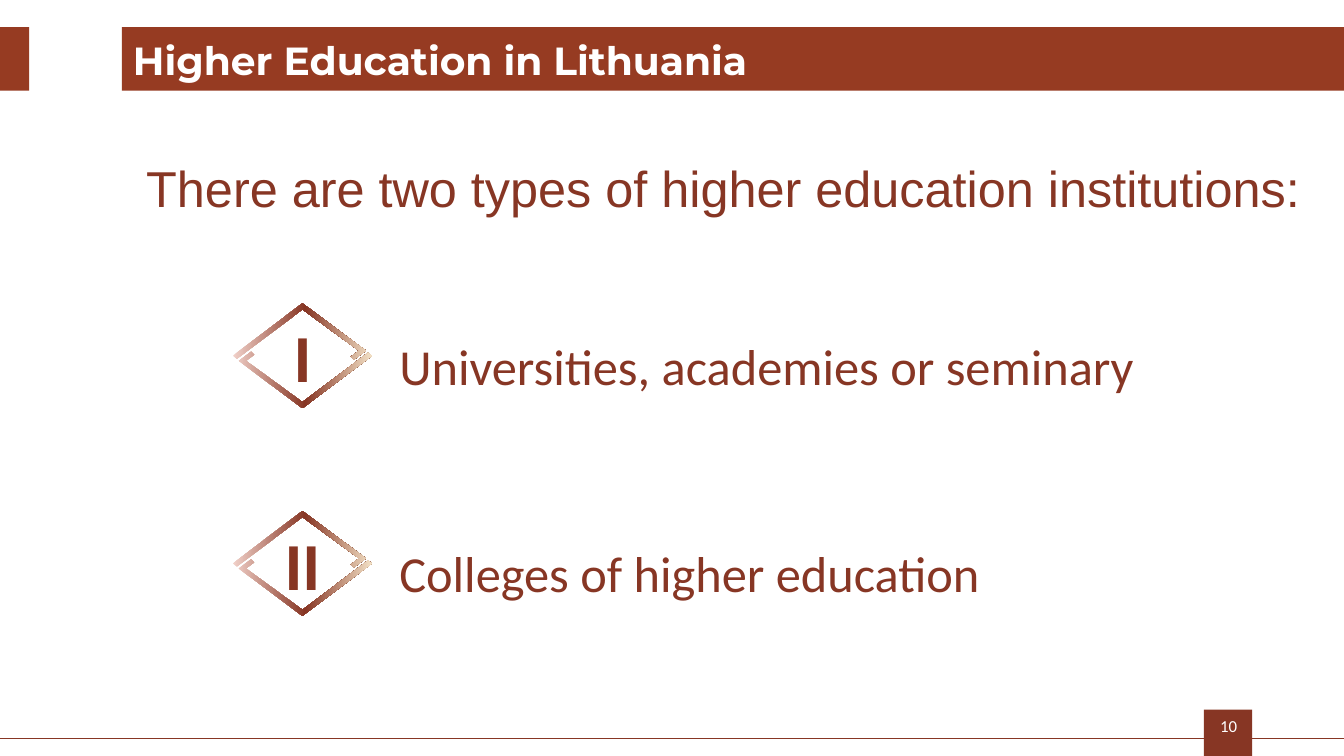
from copy import deepcopy
from pptx import Presentation
from pptx.dml.color import RGBColor
from pptx.enum import shapes, text
from pptx.oxml import parse_xml
from pptx.oxml.ns import nsdecls
from pptx.util import Inches, Pt

# Content
TITLE = "Higher Education in Lithuania"
INTRO = "There are two types of higher education institutions:"
PAGE = "10"
# numeral, diamond centre y, label, label box (left, top, width, height)
TYPES = [
    ("I", 3.53, "Universities, academies or seminary", (3.96, 2.56, 8.49, 1.94)),
    ("II", 5.59, "Colleges of higher education", (3.96, 4.88, 7.85, 1.42)),
]
THEME = {
    "brown": "873624", "band": "963B22", "white": "FFFFFF",
    "gradient": [(0, "F1D1C9"), (0.52, "873624"), (1, "F3E1C6")],
    "title": 28, "body": 36, "numeral": 48, "page": 12,
    "head_font": "Montserrat", "intro_font": "Arial", "body_font": "Calibri",
}
BANDS = [
    (11.94, 7.04, 0.48, 0.46, "brown"),
    (1.21, 0.27, 12.12, 0.63, "band"),
    (0, 0.27, 0.29, 0.63, "band"),
]
# Upper half of the diamond around its centre; the lower half is its half turn
DIAMOND_X = 3
UPPER = [(0, -0.52), (0.63, -0.05), (0.51, 0.04), (0.48, 0.01),
         (0.56, -0.05), (0, -0.46), (-0.65, 0.03), (-0.69, 0)]
LOWER = [(-x, -y) for x, y in UPPER]

prs = Presentation()
prs.slide_width, prs.slide_height = Inches(13.33), Inches(7.5)
slide = prs.slides.add_slide(prs.slide_layouts[6])


def color(name):
    return RGBColor.from_string(THEME[name])


def write(sp, words, size, font, fill="brown", bold=False, align="LEFT",
          anchor="MIDDLE", spacing=None, insets=(0.1, 0.05, 0.1, 0.05)):
    tf = sp.text_frame
    tf.word_wrap = True
    tf.vertical_anchor = text.MSO_ANCHOR[anchor]
    tf.margin_left, tf.margin_top, tf.margin_right, tf.margin_bottom = map(Inches, insets)
    p = tf.paragraphs[0]
    p.text = words
    p.alignment = text.PP_ALIGN[align]
    p.line_spacing = spacing
    p.font.size, p.font.name, p.font.bold = Pt(THEME[size]), THEME[font], bold
    p.font.color.rgb = color(fill)


def add_text(box, *args, **kwargs):
    write(slide.shapes.add_textbox(*map(Inches, box)), *args, **kwargs)


def add_diamond(cy):
    lower, upper = [[(Inches(DIAMOND_X + x), Inches(cy + y)) for x, y in half]
                    for half in (LOWER, UPPER)]
    fb = slide.shapes.build_freeform(*lower[0])
    fb.add_line_segments(lower[1:], close=True)
    fb.move_to(*upper[0])
    fb.add_line_segments(upper[1:], close=True)
    sp = fb.convert_to_shape()
    sp.shadow.inherit = False
    sp.line.fill.background()
    sp.fill.gradient()
    sp.fill.gradient_angle = 0
    # A third colour stop beside the two default ones
    first = sp._element.spPr.find(".//{*}gs")
    first.addnext(deepcopy(first))
    for stop, (position, rgb) in zip(sp.fill.gradient_stops, THEME["gradient"]):
        stop.position = position
        stop.color.rgb = RGBColor.from_string(rgb)
    return sp


# Bands and footer line
for *box, fill in BANDS:
    sp = slide.shapes.add_shape(shapes.MSO_SHAPE.RECTANGLE, *map(Inches, box))
    sp.shadow.inherit = False
    sp.fill.solid()
    sp.fill.fore_color.rgb = color(fill)
    sp.line.fill.background()
footer = slide.shapes.add_connector(shapes.MSO_CONNECTOR.STRAIGHT, 0, Inches(7.33),
                                    prs.slide_width, Inches(7.33))
footer.line.color.rgb = color("brown")
footer.line.width = Pt(0.5)
footer._element.spPr.append(parse_xml(f"<a:effectLst {nsdecls('a')}/>"))

# Title, introduction and page number
add_text((1.22, 0.27, 10.57, 0.61), TITLE, "title", "head_font", "white",
         bold=True, anchor="BOTTOM", spacing=0.9)
add_text((1.22, 1.51, 11.91, 1.17), INTRO, "body", "intro_font", align="JUSTIFY",
         anchor="TOP", insets=(0.23, 0.05, 0.1, 0.05))
add_text((11.91, 7, 0.55, 0.4), PAGE, "page", "body_font", "white", align="CENTER")

# Institution types
for numeral, cy, label, box in TYPES:
    write(add_diamond(cy), numeral, "numeral", "body_font", bold=True, align="CENTER")
    add_text(box, label, "body", "body_font", spacing=1.3, insets=(0, 0, 0, 0))

prs.save("out.pptx")
